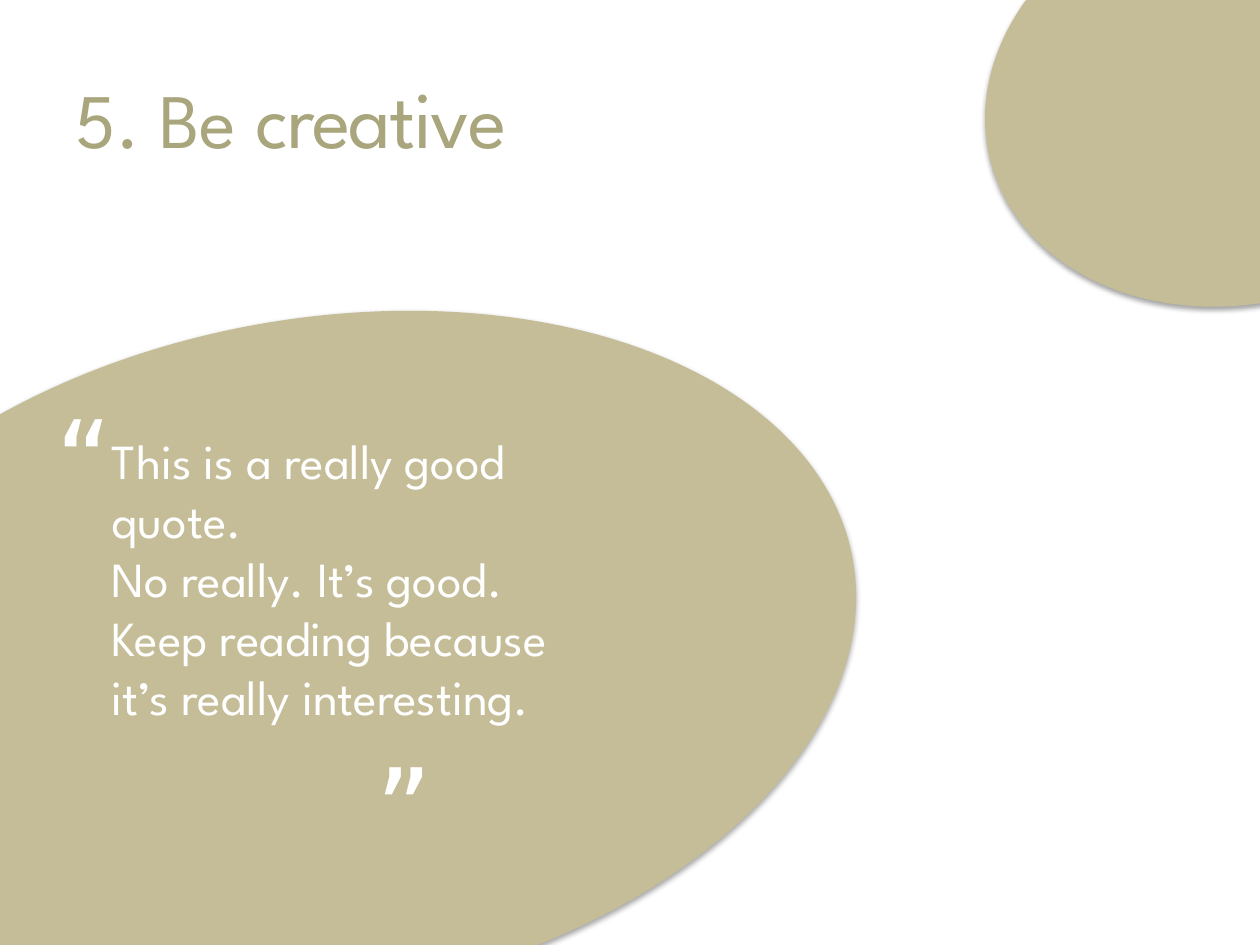
from lxml.etree import SubElement
from pptx import Presentation
from pptx.dml.color import RGBColor
from pptx.enum.shapes import MSO_SHAPE
from pptx.enum.text import MSO_ANCHOR, PP_ALIGN
from pptx.oxml.ns import qn
from pptx.util import Inches, Pt

SAND, OLIVE, WHITE = "C4BD97", "A9A57C", "FFFFFF"
BODY_FONT, MARK_FONT = "League Spartan", "DejaVu Sans Mono"


def add_run(paragraph, text, size, color=WHITE, font=BODY_FONT, spacing=0):
    """Append a formatted run; spacing is the letter spacing in points."""
    run = paragraph.add_run()
    run.text = text
    run.font.size = Pt(size)
    run.font.name = font
    run.font.color.rgb = RGBColor.from_string(color)
    if spacing:
        run.font._rPr.set("spc", str(spacing * 100))


def add_text_box(slide, box, lines, **style):
    frame = slide.shapes.add_textbox(*map(Inches, box)).text_frame
    frame.word_wrap = True
    for index, line in enumerate(lines):
        paragraph = frame.add_paragraph() if index else frame.paragraphs[0]
        add_run(paragraph, line, **style)


presentation = Presentation()
presentation.slide_width = Inches(10)
presentation.slide_height = Inches(7.5)
slide = presentation.slides.add_slide(presentation.slide_layouts[5])

# Tilted ellipses running off the slide, each with a soft shadow below
for box, rotation in [((-1.88, 2.54, 8.72, 5.38), 349.4), ((7.79, -0.92, 4.17, 3.32), 344.4)]:
    ellipse = slide.shapes.add_shape(MSO_SHAPE.OVAL, *map(Inches, box))
    ellipse.rotation = rotation
    ellipse.fill.solid()
    ellipse.fill.fore_color.rgb = RGBColor.from_string(SAND)
    ellipse.line.fill.background()
    ellipse.shadow.inherit = False
    effects = ellipse._element.spPr.find(qn("a:effectLst"))
    shadow = SubElement(effects, qn("a:outerShdw"), blurRad=str(Pt(3.1)), dist=str(Pt(1.8)),
                        dir="5400000", rotWithShape="0")
    shadow_color = SubElement(shadow, qn("a:srgbClr"), val="000000")
    SubElement(shadow_color, qn("a:alpha"), val="35000")

# Title
title = slide.shapes.title
title.left, title.top, title.width, title.height = map(Inches, (0.5, 0.3, 9, 1.25))
title.text_frame.vertical_anchor = MSO_ANCHOR.MIDDLE
heading = title.text_frame.paragraphs[0]
heading.alignment = PP_ALIGN.LEFT
add_run(heading, "5. Be ", 44, color=OLIVE)
add_run(heading, "creative", 46, color=OLIVE, spacing=-1)

# Quote and its marks
quote = ["This is a really good quote.",
         "No really. It’s good. Keep reading because it’s really interesting."]
add_text_box(slide, (0.79, 3.37, 3.81, 3.4), quote, size=28)
for mark, left, top in [("“", 0.34, 3.1), ("”", 2.88, 5.86)]:
    add_text_box(slide, (left, top, 1.88, 1.01), [mark], size=54, font=MARK_FONT)

presentation.save("out.pptx")
